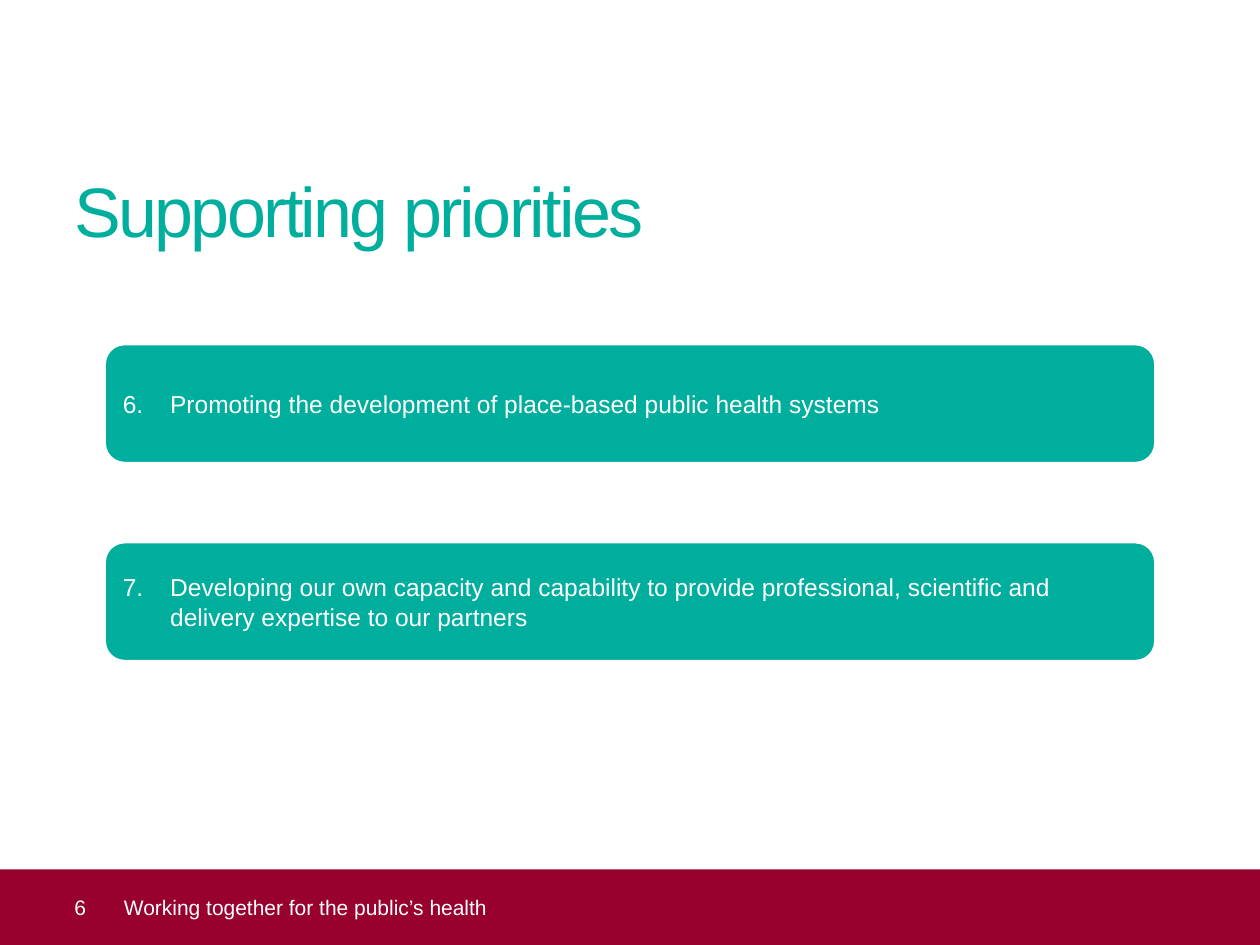
import dataclasses
import pptx
import pptx.util
import pptx.dml.color
import pptx.enum.shapes
import pptx.enum.text
import pptx.oxml.xmlchemy
import lxml.etree
import pptx.oxml.ns

Pt = pptx.util.Pt
RGB = pptx.dml.color.RGBColor
Shape = pptx.enum.shapes.MSO_SHAPE
Align = pptx.enum.text.PP_ALIGN
Anchor = pptx.enum.text.MSO_ANCHOR


@dataclasses.dataclass(frozen=True)
class Theme:
    teal: RGB = RGB(0x00, 0xAE, 0x9E)
    wine: RGB = RGB(0x98, 0x00, 0x2E)
    white: RGB = RGB(0xFF, 0xFF, 0xFF)
    face: str = "Arial"
    head: int = 40
    body: int = 14
    foot: int = 12


THEME = Theme()
TITLE = "Supporting priorities"
FIRST = 6
CARDS = (
    "Promoting the development of place-based public health systems",
    "Developing our own capacity and capability to provide professional, "
    "scientific and delivery expertise to our partners",
)


def place(shape, left, top, width, height):
    shape.left, shape.top = Pt(left), Pt(top)
    shape.width, shape.height = Pt(width), Pt(height)


def inset(frame, left=0, top=0, right=0, bottom=0):
    frame.margin_left, frame.margin_top = Pt(left), Pt(top)
    frame.margin_right, frame.margin_bottom = Pt(right), Pt(bottom)


def write(frame, text, size, color):
    frame.word_wrap = True
    frame.auto_size = pptx.enum.text.MSO_AUTO_SIZE.NONE
    frame.vertical_anchor = Anchor.MIDDLE
    para = frame.paragraphs[0]
    para.text = text
    para.alignment = Align.LEFT
    para.font.name = THEME.face
    para.font.size = Pt(size)
    para.font.color.rgb = color
    return para


def indent(para, left, first=0):
    props = para._p.get_or_add_pPr()
    props.set("marL", str(Pt(left)))
    props.set("indent", str(Pt(first)))
    return props


def number(para, start):
    props = indent(para, 27, -27)
    bullet = lxml.etree.Element(
        pptx.oxml.ns.qn("a:buAutoNum"), type="arabicPeriod", startAt=str(start)
    )
    props.insert(0, bullet)


def add_title(slide):
    title = slide.shapes.title
    place(title, 42.5, 94.3, 632, 51)
    inset(title.text_frame)
    para = write(title.text_frame, TITLE, THEME.head, THEME.teal)
    para.runs[0]._r.get_or_add_rPr().set("spc", "-150")


def add_block(slide, kind, box, fill):
    block = slide.shapes.add_shape(kind, *map(Pt, box))
    block.shadow.inherit = False
    block.fill.solid()
    block.fill.fore_color.rgb = fill
    block.line.fill.background()
    return block


def add_foot(slide):
    top, height = 496.8, 43.2
    band = add_block(slide, Shape.RECTANGLE, (0, top, 720, height), THEME.wine)
    inset(band.text_frame, right=7.2)
    para = write(band.text_frame, str(FIRST), THEME.foot, THEME.white)
    indent(para, 42.5)
    label = slide.shapes.add_textbox(Pt(70.8), Pt(top), Pt(607), Pt(height))
    inset(label.text_frame)
    text = "Working together for the public’s health"
    write(label.text_frame, text, THEME.foot, THEME.white)


def add_card(slide, row, text):
    box = (59.8, 196.6 + 113.2 * row, 600.4, 68)
    card = add_block(slide, Shape.ROUNDED_RECTANGLE, box, THEME.teal)
    card.line.color.rgb = THEME.white
    card.line.width = Pt(1.5)
    para = write(card.text_frame, text, THEME.body, THEME.white)
    number(para, FIRST + row)


def main():
    deck = pptx.Presentation()
    deck.slide_width, deck.slide_height = Pt(720), Pt(540)
    slide = deck.slides.add_slide(deck.slide_layouts[5])
    add_title(slide)
    add_foot(slide)
    for row, text in enumerate(CARDS):
        add_card(slide, row, text)
    deck.save("out.pptx")


if __name__ == "__main__":
    main()
